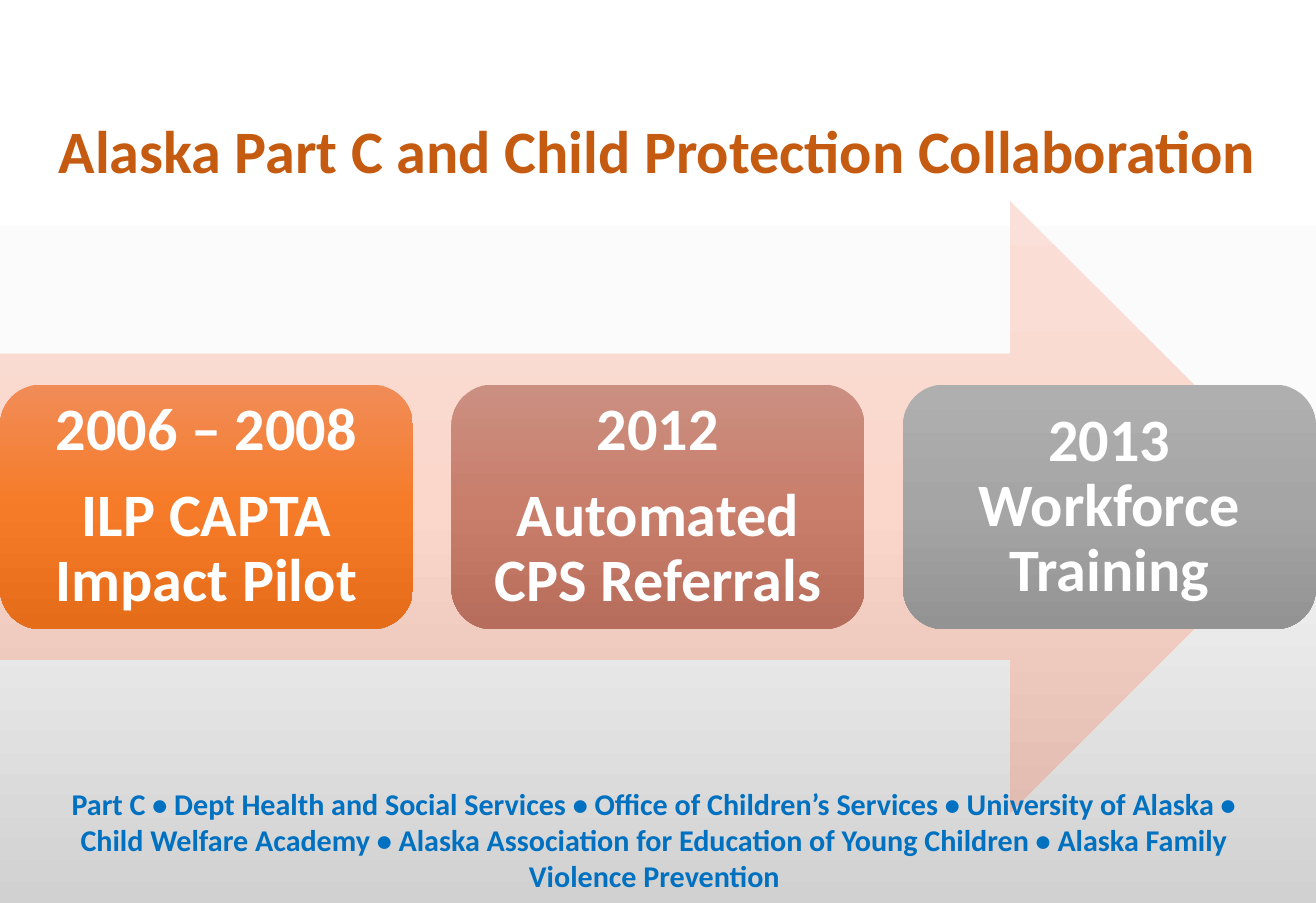
from copy import deepcopy

from pptx import Presentation
from pptx.dml.color import RGBColor
from pptx.enum.shapes import MSO_SHAPE as Kind
from pptx.enum.text import MSO_ANCHOR as Anchor, PP_ALIGN as Align
from pptx.oxml.ns import qn
from pptx.util import Inches, Pt

WIDE, HIGH = 10.93, 7.5
HUES = {
    "title": "C55A11",
    "card": "FFFFFF",
    "foot": "0070C0",
    "back": ["FFFFFF", "FBFBFB", "D1D1D1"],
    "arrow": ["FAE0D8", "FAD6CB", "E2BCB1"],
    "pilot": ["F18C57", "F67B28", "E56C19"],
    "auto": ["CB8F81", "C97E6B", "B76D5B"],
    "train": ["AFAFAF", "A5A5A5", "939393"],
}


def shade(owner, fill, hues):
    """Fill the owner from top to bottom with evenly spaced hues."""
    fill.gradient()
    fill.gradient_angle = 270
    stops = owner.element.find(".//" + qn("a:gsLst"))
    stops.insert(1, deepcopy(stops[0]))
    for i, (stop, hue) in enumerate(zip(fill.gradient_stops, hues)):
        stop.position = i / (len(hues) - 1)
        stop.color.rgb = RGBColor.from_string(hue)


def write(shape, lines, size, hue, frame, para):
    """Set bold centred lines, with format values for frame and paragraphs."""
    text = shape.text_frame
    text.text = "\n".join(lines)
    text.word_wrap = True
    for name, value in frame.items():
        setattr(text, name, value)
    for part in text.paragraphs:
        for name, value in {"alignment": Align.CENTER, **para}.items():
            setattr(part, name, value)
        for run in part.runs:
            font = run.font
            font.name, font.size, font.bold = "Calibri", Pt(size), True
            font.color.rgb = RGBColor.from_string(HUES[hue])


deck = Presentation()
deck.slide_width, deck.slide_height = Inches(WIDE), Inches(HIGH)
slide = deck.slides.add_slide(deck.slide_layouts[6])
shade(slide, slide.background.fill, HUES["back"])
shapes = slide.shapes

# Title
title = shapes.add_textbox(*map(Inches, (-0.2, 0.83, 11.32, 1.45)))
write(title, ["Alaska Part C and Child Protection Collaboration"], 36, "title",
      {"margin_top": Inches(0.18)}, {"line_spacing": 0.9})

# Arrow with a row of cards across its middle
top, tall = 1.67, 5.08
card_w, card_h = 3.43, tall * 0.4
step = (WIDE - card_w) / 2
cards = [
    ("pilot", ["2006 – 2008", "ILP CAPTA Impact Pilot"]),
    ("auto", ["2012", "Automated CPS Referrals"]),
    ("train", ["2013\vWorkforce Training"]),
]
blocks = [(Kind.RIGHT_ARROW, (0, top, WIDE, tall), "arrow", [])]
for col, (hue, lines) in enumerate(cards):
    box = (col * step, top + (tall - card_h) / 2, card_w, card_h)
    blocks.append((Kind.ROUNDED_RECTANGLE, box, hue, lines))

sides = ("left", "top", "right", "bottom")
inset = {f"margin_{side}": Inches(0.15) for side in sides}
for kind, box, hue, lines in blocks:
    shape = shapes.add_shape(kind, *map(Inches, box))
    shape.shadow.inherit = False
    shape.line.fill.background()
    shade(shape, shape.fill, HUES[hue])
    if lines:
        write(shape, lines, 36, "card",
              {"vertical_anchor": Anchor.MIDDLE, **inset},
              {"line_spacing": 0.9, "space_after": Pt(12.6)})

# Partners
foot = shapes.add_textbox(*map(Inches, (0.31, 6.47, 10.25, 1.01)))
names = [
    "Part C",
    "Dept Health and Social Services",
    "Office of Children’s Services",
    "University of Alaska",
    "Child Welfare Academy",
    "Alaska Association for Education of Young Children",
    "Alaska Family Violence Prevention",
]
write(foot, [" • ".join(names)], 18, "foot", {}, {})

deck.save("out.pptx")
